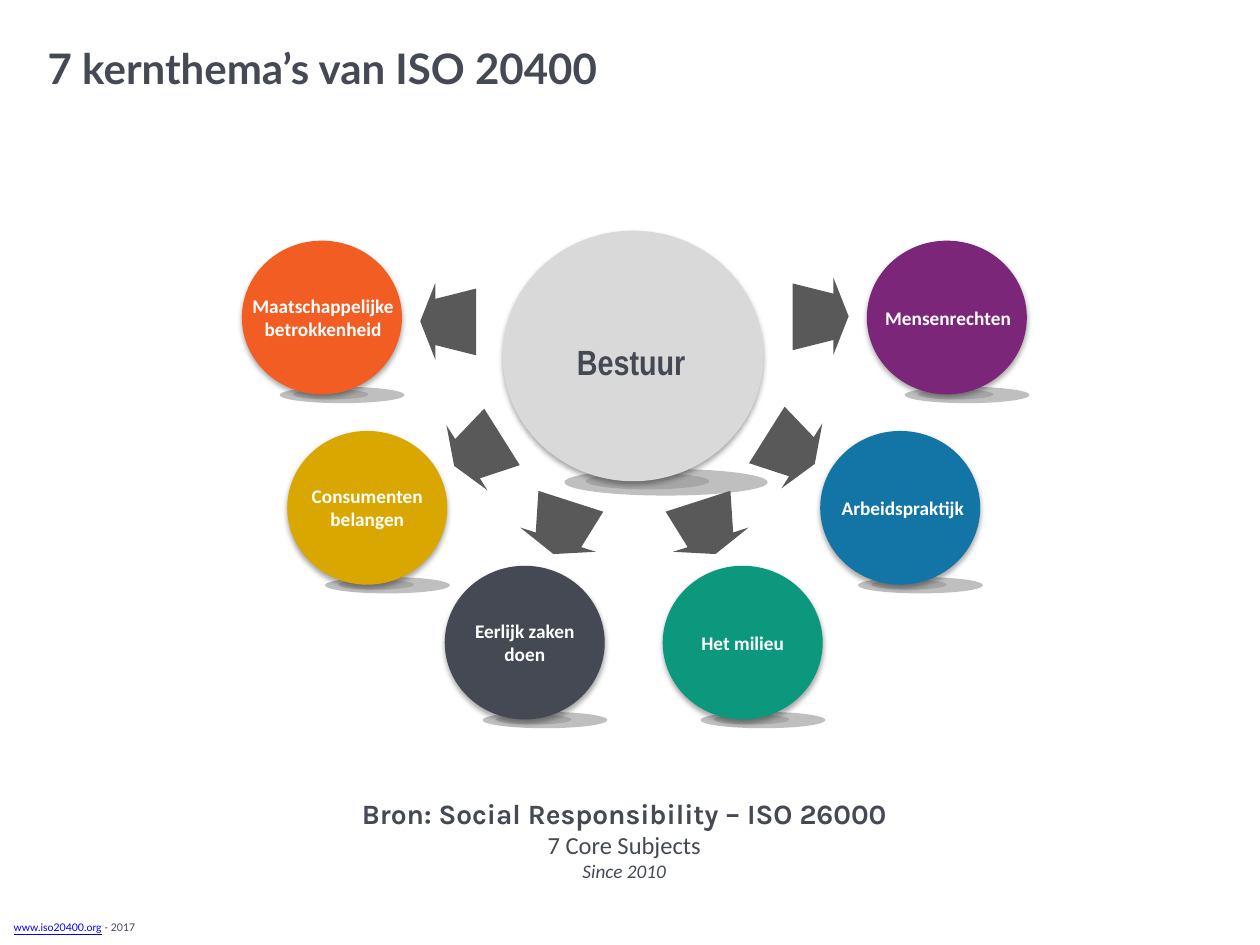
from dataclasses import dataclass

from lxml import etree
from pptx import Presentation
from pptx.dml.color import RGBColor
from pptx.enum.shapes import MSO_SHAPE
from pptx.enum.text import MSO_ANCHOR, PP_ALIGN
from pptx.oxml.ns import qn
from pptx.util import Inches, Pt

ELLIPSE = MSO_SHAPE.OVAL
TRAPEZOID = MSO_SHAPE.TRAPEZOID
TRIANGLE = MSO_SHAPE.ISOSCELES_TRIANGLE
CENTER, LEFT = PP_ALIGN.CENTER, PP_ALIGN.LEFT
MIDDLE, TOP = MSO_ANCHOR.MIDDLE, MSO_ANCHOR.TOP

COLORS = {
    "text": "444953", "white": "FFFFFF", "link": "0000FF", "arrow": "595959",
    "outer_shade": "BFBFBF", "inner_shade": "A6A6A6", "shadow": "000000",
    "gray": "D9D9D9", "slate": "444953", "gold": "DAA600", "orange": "F15D22",
    "green": "0B987C", "blue": "1275A5", "purple": "7C267A",
}
BALL_W, BALL_H = 1.27, 1.22
AXIS = 5.035
LABEL = {"name": "Calibri", "size": Pt(11), "bold": True}
CORE = {"name": "Arial Narrow", "size": Pt(20), "bold": True}


@dataclass
class Ball:
    text: str
    color: str
    x: float
    y: float
    label_w: float = 1.29
    label_h: float = 0.47
    dx: float = 0.0
    dy: float = 0.0
    scale: float = 1.0


@dataclass
class Arrow:
    angle: float
    head: tuple[float, float]
    tail: tuple[float, float]
    head_w: float = 0.61
    tail_w: float = 0.53
    mirror_dy: float = 0.0


@dataclass
class Run:
    text: str
    font: dict
    color: str = "text"


BALLS = [
    Ball("Bestuur", "gray", 5.025, 2.825, 2.16, 0.44, -0.015, 0.045, 1.63),
    Ball("Eerlijk zaken doen", "slate", 4.165, 5.1),
    Ball("Consumenten belangen", "gold", 2.915, 4.03),
    Ball("Maatschappelijke betrokkenheid", "orange", 2.555, 2.52, 1.33, dx=0.01),
    Ball("Het milieu", "green", 5.895, 5.1, label_h=0.29),
    Ball("Arbeidspraktijk", "blue", 7.145, 4.03, label_h=0.29, dx=0.02),
    Ball("Mensenrechten", "purple", 7.515, 2.52, 1.37, 0.29, 0.01),
]
ARROWS = [
    Arrow(90, (6.675, 2.51), (6.455, 2.515), mirror_dy=0.04),
    Arrow(122.2, (6.415, 3.65), (6.225, 3.54), mirror_dy=0.015),
    Arrow(162.2, (5.66, 4.34), (5.59, 4.135), 0.63, 0.54),
]


def paint(owner, color: str) -> None:
    """Give a font or fill owner a solid colour."""
    owner.rgb = RGBColor.from_string(COLORS[color])


def add_shape(s, kind, cx: float, cy: float, w: float, h: float, color: str, angle: float = 0):
    """Draw a flat shape around its centre."""
    sp = s.shapes.add_shape(kind, Inches(cx - w / 2), Inches(cy - h / 2), Inches(w), Inches(h))
    sp.shadow.inherit = False
    sp.fill.solid()
    paint(sp.fill.fore_color, color)
    sp.line.fill.background()
    sp.rotation = angle
    return sp


def add_soft_shadow(sp) -> None:
    """Put a blurred shadow just below a shape."""
    effects = sp._element.spPr.find(qn("a:effectLst"))
    shadow = etree.SubElement(effects, qn("a:outerShdw"), blurRad=str(Pt(3.1)),
                              dist=str(Pt(1.8)), dir="5400000", rotWithShape="0")
    color = etree.SubElement(shadow, qn("a:srgbClr"), val=COLORS["shadow"])
    etree.SubElement(color, qn("a:alpha"), val="35000")


def add_ball(s, ball: Ball) -> None:
    """Draw a ball on its two floor shades."""
    k = ball.scale
    for dx, dy, w, h, color in ((0.16, 0.615, 0.99, 0.13, "outer_shade"),
                                (0.07, 0.61, 0.6, 0.08, "inner_shade")):
        add_shape(s, ELLIPSE, ball.x + dx * k, ball.y + dy * k, w * k, h * k, color)
    add_soft_shadow(add_shape(s, ELLIPSE, ball.x, ball.y, BALL_W * k, BALL_H * k, ball.color))


def add_arrow_pair(s, arrow: Arrow) -> None:
    """Draw an arrow and its mirror image across the axis."""
    for kind, (x, y), w, h in ((TRAPEZOID, arrow.tail, arrow.tail_w, 0.33),
                               (TRIANGLE, arrow.head, arrow.head_w, 0.12)):
        add_shape(s, kind, x, y, w, h, "arrow", arrow.angle)
        add_shape(s, kind, 2 * AXIS - x, y + arrow.mirror_dy, w, h, "arrow", 360 - arrow.angle)


def add_text(s, box: tuple, paragraphs: list[list[Run]], align=LEFT, anchor=TOP) -> None:
    """Write paragraphs of runs in a wrapping text box."""
    tf = s.shapes.add_textbox(*map(Inches, box)).text_frame
    tf.word_wrap = True
    tf.vertical_anchor = anchor
    for i, runs in enumerate(paragraphs):
        p = tf.add_paragraph() if i else tf.paragraphs[0]
        p.alignment = align
        for run in runs:
            r = p.add_run()
            r.text = run.text
            for key, value in run.font.items():
                setattr(r.font, key, value)
            paint(r.font.color, run.color)


def add_label(s, ball: Ball) -> None:
    """Write the name of a ball over it."""
    box = (ball.x + ball.dx - ball.label_w / 2, ball.y + ball.dy - ball.label_h / 2,
           ball.label_w, ball.label_h)
    is_core = ball.scale > 1
    run = Run(ball.text, CORE if is_core else LABEL, "text" if is_core else "white")
    add_text(s, box, [[run]], CENTER, MIDDLE)


def main() -> None:
    """Build the slide and save it."""
    prs = Presentation()
    prs.slide_width, prs.slide_height = Inches(10), Inches(7.5)
    s = prs.slides.add_slide(prs.slide_layouts[6])
    small = {"name": "Lato", "size": Pt(6)}
    add_text(s, (0.01, 7.26, 6.47, 0.2), [[
        Run("www.iso20400.org", {**small, "underline": True}, "link"), Run(" - 2017", small)]])
    add_text(s, (0.28, 0.29, 6.69, 0.5), [[
        Run("7 kernthema’s van ISO 20400", {"name": "Lato", "size": Pt(24), "bold": True})]])
    add_text(s, (1.61, 6.27, 6.69, 0.79), [
        [Run("Bron: Social Responsibility – ISO 26000",
             {"name": "Karla", "size": Pt(16), "bold": True})],
        [Run("7 Core Subjects", {"name": "Calibri", "size": Pt(14)})],
        [Run("Since 2010", {"name": "Calibri", "size": Pt(11), "italic": True})],
    ], CENTER)
    for ball in BALLS:
        add_ball(s, ball)
    for arrow in ARROWS:
        add_arrow_pair(s, arrow)
    for ball in BALLS:
        add_label(s, ball)
    prs.save("out.pptx")


if __name__ == "__main__":
    main()
